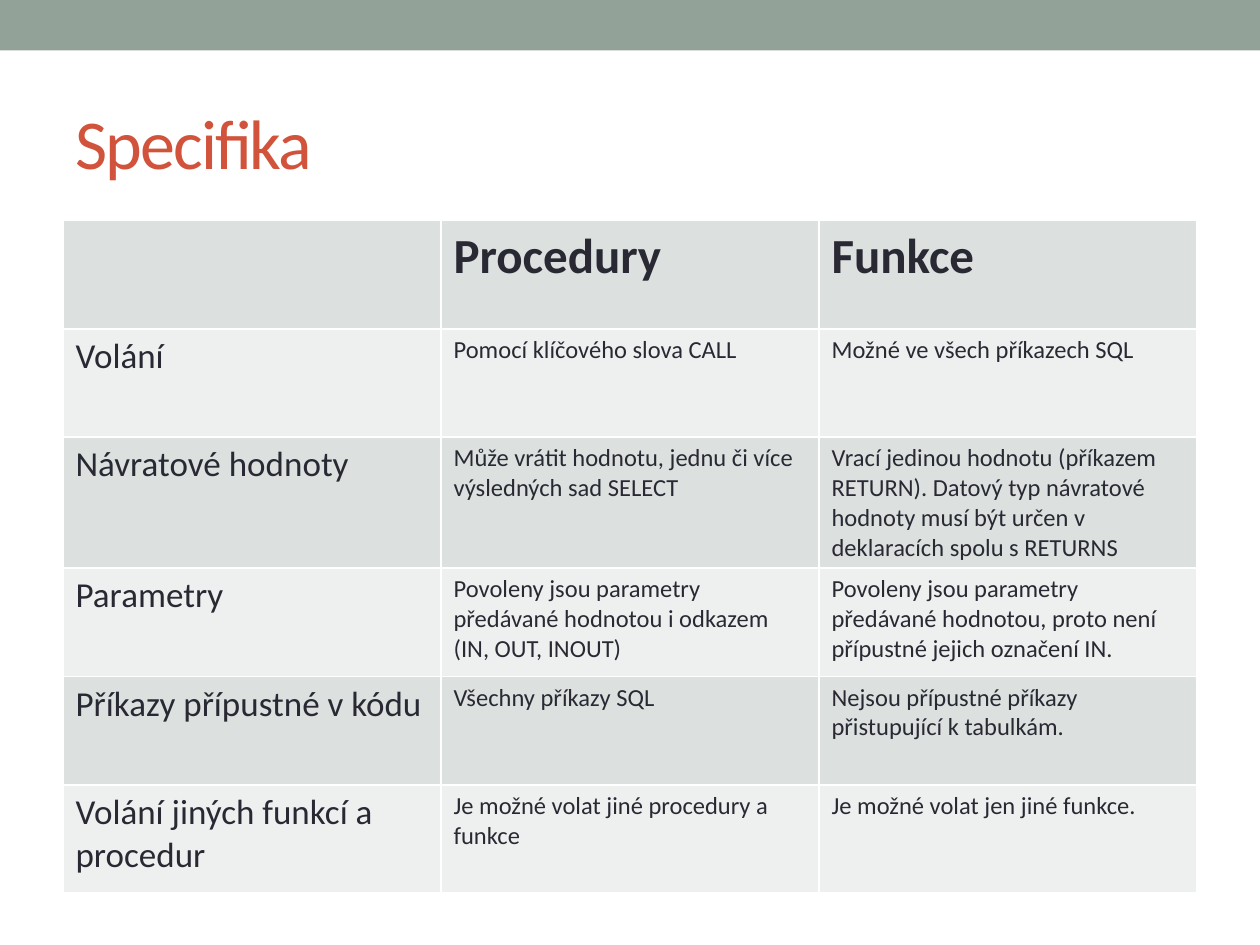
"""Build a slide comparing stored procedures and functions in a table."""
from lxml import etree
from pptx import Presentation
from pptx import util as u
from pptx.dml.color import RGBColor
from pptx.enum import shapes, text
from pptx.oxml.ns import qn

TITLE = "Specifika"
ROWS = [
    ("", "Procedury", "Funkce"),
    ("Volání", "Pomocí klíčového slova CALL", "Možné ve všech příkazech SQL"),
    ("Návratové hodnoty",
     "Může vrátit hodnotu, jednu či více výsledných sad SELECT",
     "Vrací jedinou hodnotu (příkazem RETURN). Datový typ návratové "
     "hodnoty musí být určen v deklaracích spolu s RETURNS"),
    ("Parametry",
     "Povoleny jsou parametry předávané hodnotou i odkazem (IN, OUT, INOUT)",
     "Povoleny jsou parametry předávané hodnotou, proto není přípustné "
     "jejich označení IN."),
    ("Příkazy přípustné v kódu", "Všechny příkazy SQL",
     "Nejsou přípustné příkazy přistupující k tabulkám."),
    ("Volání jiných funkcí a procedur",
     "Je možné volat jiné procedury a funkce",
     "Je možné volat jen jiné funkce."),
]

FONT = "Calibri"
SAGE = RGBColor(0x93, 0xA2, 0x99)
RED = RGBColor(0xD2, 0x53, 0x3C)
INK = RGBColor(0x29, 0x29, 0x34)
BANDS = (RGBColor(0xDC, 0xE0, 0xDE), RGBColor(0xEE, 0xF0, 0xEF))
BORDER = "FFFFFF"

WIDTH, HEIGHT = u.Inches(10), u.Inches(7.5)
MARGIN = WIDTH // 20
CONTENT_WIDTH = WIDTH - 2 * MARGIN
TABLE_TOP = u.Inches(1.75)
ROW_HEIGHT, TALL_ROW_HEIGHT = u.Inches(0.86), u.Inches(1.04)
TALL_ROW = 2
HEADER_SIZE, LABEL_SIZE, BODY_SIZE = 28, 20, 14


def style_run(run, size, color, bold=False):
    run.font.name = FONT
    run.font.size = u.Pt(size)
    run.font.bold = bold
    run.font.color.rgb = color


def add_borders(cell):
    properties = cell._tc.get_or_add_tcPr()
    for side in ("a:lnL", "a:lnR", "a:lnT", "a:lnB"):
        line = etree.SubElement(properties, qn(side), w=str(u.Pt(1)))
        fill = etree.SubElement(line, qn("a:solidFill"))
        etree.SubElement(fill, qn("a:srgbClr"), val=BORDER)


def add_band(slide):
    band = slide.shapes.add_shape(
        shapes.MSO_SHAPE.RECTANGLE, 0, 0, WIDTH, u.Inches(0.4))
    band.shadow.inherit = False
    band.fill.solid()
    band.fill.fore_color.rgb = SAGE
    band.line.fill.background()


def add_title(slide):
    box = slide.shapes.add_textbox(
        MARGIN, u.Inches(0.58), CONTENT_WIDTH, u.Inches(1.08))
    frame = box.text_frame
    frame.word_wrap = True
    frame.vertical_anchor = text.MSO_ANCHOR.MIDDLE
    frame.text = TITLE
    run = frame.paragraphs[0].runs[0]
    style_run(run, 40, RED)
    run._r.get_or_add_rPr().set("spc", "-100")


def add_comparison(slide):
    heights = [TALL_ROW_HEIGHT if row == TALL_ROW else ROW_HEIGHT
               for row in range(len(ROWS))]
    columns = len(ROWS[0])
    table = slide.shapes.add_table(
        len(ROWS), columns, MARGIN, TABLE_TOP, CONTENT_WIDTH, sum(heights)).table
    for column in table.columns:
        column.width = CONTENT_WIDTH // columns
    for row, values in enumerate(ROWS):
        table.rows[row].height = heights[row]
        for column, value in enumerate(values):
            cell = table.cell(row, column)
            add_borders(cell)
            cell.fill.solid()
            cell.fill.fore_color.rgb = BANDS[row % 2]
            cell.text_frame.text = value
            size = (HEADER_SIZE if row == 0
                    else LABEL_SIZE if column == 0 else BODY_SIZE)
            for run in cell.text_frame.paragraphs[0].runs:
                style_run(run, size, INK, bold=row == 0)


def main():
    presentation = Presentation()
    presentation.slide_width, presentation.slide_height = WIDTH, HEIGHT
    slide = presentation.slides.add_slide(presentation.slide_layouts[6])
    add_band(slide)
    add_title(slide)
    add_comparison(slide)
    presentation.save("out.pptx")


if __name__ == "__main__":
    main()
